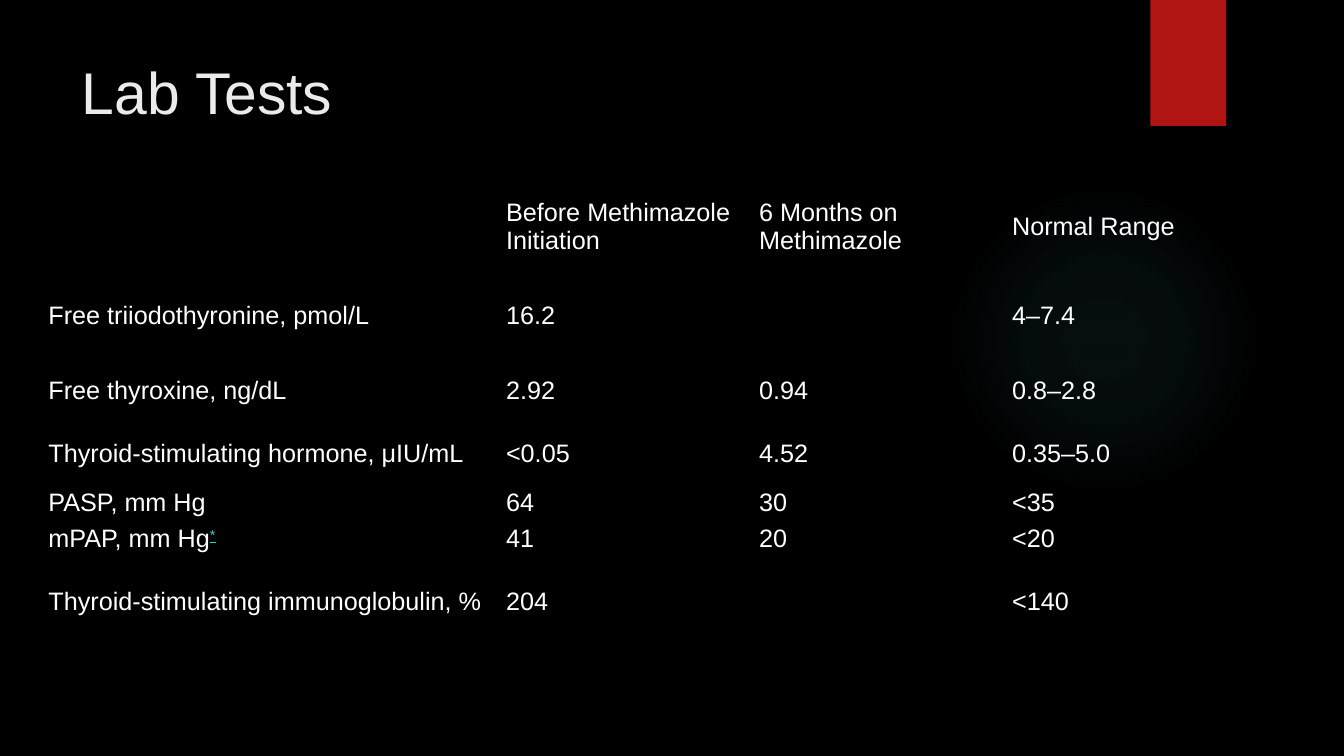
from lxml import etree
from pptx import Presentation
from pptx import util as u
from pptx.dml.color import RGBColor
from pptx.enum import shapes, text
from pptx.oxml import ns

HUES = {"back": "000000", "flag": "B01513", "glow": "50B9C1",
        "title": "EBEBEB", "text": "FFFFFF", "link": "58C1BA"}
PLAIN = "{2D5ABB26-0587-4C30-8999-92F81FD0307C}"
COLS = [34.05] + [18.83] * 3
ROWS = [11.73, 11.73, 8.27, 8.27, 4.67, 4.67, 11.73]
TESTS = [
    ("", "Before Methimazole Initiation", "6 Months on Methimazole", "Normal Range"),
    ("Free triiodothyronine, pmol/L", "16.2", "", "4–7.4"),
    ("Free thyroxine, ng/dL", "2.92", "0.94", "0.8–2.8"),
    ("Thyroid-stimulating hormone, μIU/mL", "<0.05", "4.52", "0.35–5.0"),
    ("PASP, mm Hg", "64", "30", "<35"),
    ("mPAP, mm Hg", "41", "20", "<20"),
    ("Thyroid-stimulating immunoglobulin, %", "204", "", "<140"),
]


class Deck:
    face = "Arial"

    def __init__(self):
        self.prs = Presentation()
        self.prs.slide_width = u.Inches(13.33)
        self.prs.slide_height = u.Inches(7.5)
        self.slide = self.prs.slides.add_slide(self.prs.slide_layouts[5])
        fill = self.slide.background.fill
        fill.solid()
        fill.fore_color.rgb = self.hue("back")

    def hue(self, name):
        return RGBColor.from_string(HUES[name])

    def wide(self, share):
        return int(self.prs.slide_width * share / 100)

    def high(self, share):
        return int(self.prs.slide_height * share / 100)

    def box(self, left, top, width, height):
        return self.wide(left), self.high(top), self.wide(width), self.high(height)

    def style(self, font, size, name):
        font.name = self.face
        font.size = u.Pt(size)
        font.color.rgb = self.hue(name)

    def shape(self, kind, name, *area):
        item = self.slide.shapes.add_shape(kind, *self.box(*area))
        item.shadow.inherit = False
        item.fill.solid()
        item.fill.fore_color.rgb = self.hue(name)
        item.line.fill.background()
        return item

    def glow(self, name, stops, *area):
        item = self.shape(shapes.MSO_SHAPE.OVAL, name, *area)
        props = item._element.spPr
        grad = etree.Element(ns.qn("a:gradFill"))
        steps = etree.SubElement(grad, ns.qn("a:gsLst"))
        for pos, alpha in stops:
            stop = etree.SubElement(steps, ns.qn("a:gs"), pos=str(pos * 1000))
            tint = etree.SubElement(stop, ns.qn("a:srgbClr"), val=HUES[name])
            etree.SubElement(tint, ns.qn("a:alpha"), val=str(alpha * 1000))
        way = etree.SubElement(grad, ns.qn("a:path"), path="circle")
        sides = dict.fromkeys("ltrb", "50000")
        etree.SubElement(way, ns.qn("a:fillToRect"), **sides)
        props.replace(props.find(ns.qn("a:solidFill")), grad)

    def title(self, words, *area):
        item = self.slide.shapes.title
        item.left, item.top, item.width, item.height = self.box(*area)
        frame = item.text_frame
        frame.text = words
        frame.vertical_anchor = text.MSO_ANCHOR.TOP
        frame.paragraphs[0].alignment = text.PP_ALIGN.LEFT
        self.style(frame.paragraphs[0].runs[0].font, 42, "title")
        self.slide.shapes._spTree.append(item._element)

    def table(self, data, cols, rows, left, top):
        area = self.box(left, top, sum(cols), sum(rows))
        grid = self.slide.shapes.add_table(len(rows), len(cols), *area).table
        grid.first_row = grid.horz_banding = False
        grid._tbl.tblPr.find(ns.qn("a:tableStyleId")).text = PLAIN
        for col, share in zip(grid.columns, cols):
            col.width = self.wide(share)
        for row, share, words in zip(grid.rows, rows, data):
            row.height = self.high(share)
            for cell, word in zip(row.cells, words):
                cell.fill.background()
                cell.vertical_anchor = text.MSO_ANCHOR.MIDDLE
                cell.margin_left = cell.margin_right = u.Inches(0.09)
                cell.margin_top = cell.margin_bottom = u.Inches(0.04)
                para = cell.text_frame.paragraphs[0]
                para.text = word
                self.style(para.font, 18, "text")
                for run in para.runs:
                    self.style(run.font, 18, "text")
        return grid

    def mark(self, cell, sign):
        run = cell.text_frame.paragraphs[0].add_run()
        run.text = sign
        self.style(run.font, 18, "link")
        run.font.underline = True
        run.font._element.set("baseline", "30000")


def main():
    deck = Deck()
    deck.glow("glow", [(0, 7), (36, 6), (69, 0)], 70.58, 24.4, 23.1, 41.07)
    deck.shape(shapes.MSO_SHAPE.RECTANGLE, "flag", 85.6, 0, 5.63, 16.67)
    deck.title("Lab Tests", 5.33, 6.67, 77.2, 20.4)
    grid = deck.table(TESTS, COLS, ROWS, 2.93, 24.13)
    deck.mark(grid.cell(5, 0), "*")
    deck.prs.save("out.pptx")


if __name__ == "__main__":
    main()
